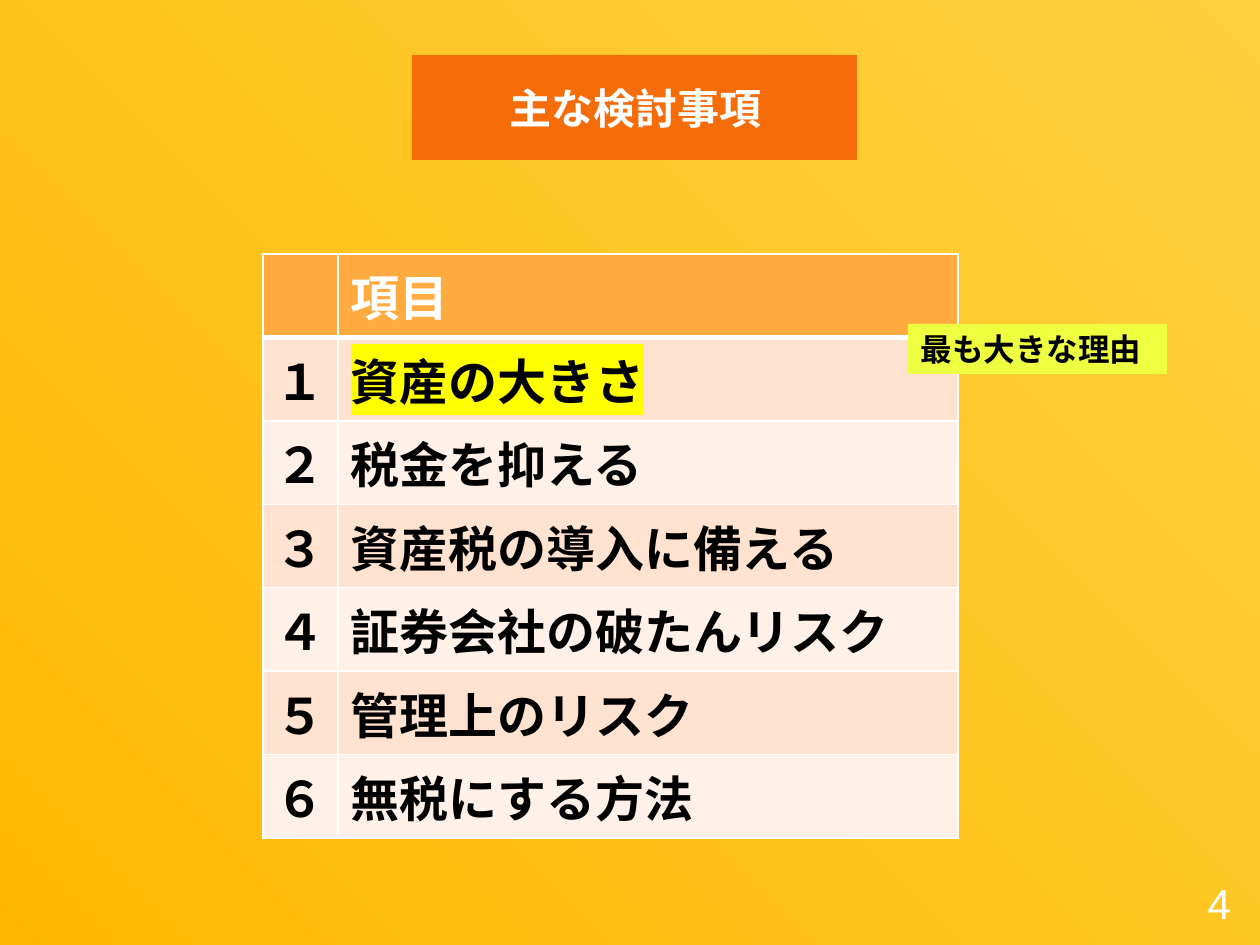
"""Build the slide that lists the main points to consider."""
from dataclasses import dataclass

from lxml import etree
from pptx import Presentation
from pptx import util as u
from pptx.dml.color import RGBColor
from pptx.enum import shapes, text
from pptx.oxml import ns

SCALE = 914400 // 126
WHITE = RGBColor(0xFF, 0xFF, 0xFF)
BLACK = RGBColor(0, 0, 0)
PALE = RGBColor(0xFF, 0xD1, 0x40)
GOLD = RGBColor(0xFF, 0xB8, 0x00)
FLAME = RGBColor(0xF5, 0x6C, 0x09)
LIME = RGBColor(0xEE, 0xFF, 0x41)
YELLOW = RGBColor(0xFF, 0xFF, 0x00)
HEAD = RGBColor(0xFF, 0xAB, 0x40)
BANDS = (RGBColor(0xFF, 0xE2, 0xCF), RGBColor(0xFF, 0xF1, 0xE8))
ITEMS = ("資産の大きさ", "税金を抑える", "資産税の導入に備える",
         "証券会社の破たんリスク", "管理上のリスク", "無税にする方法")
WIDTHS = (75, 620)
ROW = 83


@dataclass(frozen=True)
class Box:
    """A place on the slide in px."""
    left: int
    top: int
    width: int
    height: int

    def emu(self) -> tuple[int, ...]:
        """Return the place in EMU."""
        return tuple(n * SCALE for n in (self.left, self.top, self.width, self.height))


@dataclass(frozen=True)
class Style:
    """The look of a paragraph."""
    face: str
    size: int
    color: RGBColor
    bold: bool = True
    align: text.PP_ALIGN = text.PP_ALIGN.LEFT


def write(frame, words: str, style: Style) -> None:
    """Put one styled paragraph into a text frame."""
    para = frame.paragraphs[0]
    para.text = words
    para.alignment = style.align
    font = para.font
    font.name, font.size, font.bold = style.face, u.Pt(style.size), style.bold
    font.color.rgb = style.color


def pad(frame, side: int, top: int) -> None:
    """Set the insets of a text frame and centre it vertically."""
    frame.word_wrap = True
    frame.auto_size = text.MSO_AUTO_SIZE.NONE
    frame.vertical_anchor = text.MSO_ANCHOR.MIDDLE
    frame.margin_left = frame.margin_right = side * SCALE
    frame.margin_top = frame.margin_bottom = top * SCALE


def block(slide, box: Box, color: RGBColor):
    """Add a plain filled rectangle."""
    shape = slide.shapes.add_shape(shapes.MSO_SHAPE.RECTANGLE, *box.emu())
    shape.shadow.inherit = False
    shape.fill.solid()
    shape.fill.fore_color.rgb = color
    shape.line.fill.background()
    return shape


def ground(slide, box: Box) -> None:
    """Add the gradient that covers the slide."""
    shape = block(slide, box, GOLD)
    shape.fill.gradient()
    shape.fill.gradient_angle = 225
    for stop, color in zip(shape.fill.gradient_stops, (PALE, GOLD)):
        stop.color.rgb = color
    shape.line.color.rgb = WHITE
    shape.line.width = u.Pt(0.75)


def tint(parent, color: RGBColor) -> None:
    """Add a solid fill to an XML node."""
    fill = etree.SubElement(parent, ns.qn("a:solidFill"))
    etree.SubElement(fill, ns.qn("a:srgbClr"), val=str(color))


def mark(run, color: RGBColor) -> None:
    """Highlight a run."""
    node = etree.SubElement(run.font._element, ns.qn("a:highlight"))
    etree.SubElement(node, ns.qn("a:srgbClr"), val=str(color))


def edge(cell, color: RGBColor, base: int) -> None:
    """Fill a cell and draw its white borders, with a base width in points."""
    props = cell._tc.get_or_add_tcPr()
    for side, width in zip("LRTB", (1, 1, 1, base)):
        line = etree.SubElement(props, ns.qn(f"a:ln{side}"), w=str(u.Pt(width)))
        tint(line, WHITE)
    cell.fill.solid()
    cell.fill.fore_color.rgb = color


def grid(slide, left: int, top: int) -> None:
    """Add the numbered table of items."""
    rows = [("", "項目")] + [(chr(ord("０") + n), item) for n, item in enumerate(ITEMS, 1)]
    box = Box(left, top, sum(WIDTHS), ROW * len(rows))
    table = slide.shapes.add_table(len(rows), len(WIDTHS), *box.emu()).table
    for col, width in zip(table.columns, WIDTHS):
        col.width = width * SCALE
    for r, row in enumerate(rows):
        table.rows[r].height = ROW * SCALE
        style = Style("Calibri", 28, BLACK if r else WHITE)
        for c, words in enumerate(row):
            cell = table.cell(r, c)
            write(cell.text_frame, words, style)
            edge(cell, BANDS[(r - 1) % 2] if r else HEAD, 1 if r else 3)
    mark(table.cell(1, 1).text_frame.paragraphs[0].runs[0], YELLOW)


def main() -> None:
    """Build and save the slide."""
    deck = Presentation()
    deck.slide_width, deck.slide_height = 1260 * SCALE, 945 * SCALE
    slide = deck.slides.add_slide(deck.slide_layouts[5])
    ground(slide, Box(-6, -1, 1273, 959))

    page = slide.shapes.add_textbox(*Box(1168, 867, 76, 72).emu()).text_frame
    pad(page, 13, 13)
    write(page, "4", Style("Arial", 24, WHITE, False, text.PP_ALIGN.RIGHT))

    grid(slide, 263, 254)
    block(slide, Box(412, 55, 445, 105), FLAME)

    title = slide.shapes.title
    title.left, title.top, title.width, title.height = Box(425, 64, 421, 88).emu()
    pad(title.text_frame, 13, 6)
    write(title.text_frame, "主な検討事項", Style("Arial", 24, WHITE, align=text.PP_ALIGN.CENTER))
    slide.shapes._spTree.append(title._element)

    note = block(slide, Box(908, 324, 259, 50), LIME).text_frame
    pad(note, 13, 6)
    write(note, "最も大きな理由", Style("Noto Sans CJK JP", 18, BLACK))
    deck.save("out.pptx")


if __name__ == "__main__":
    main()
